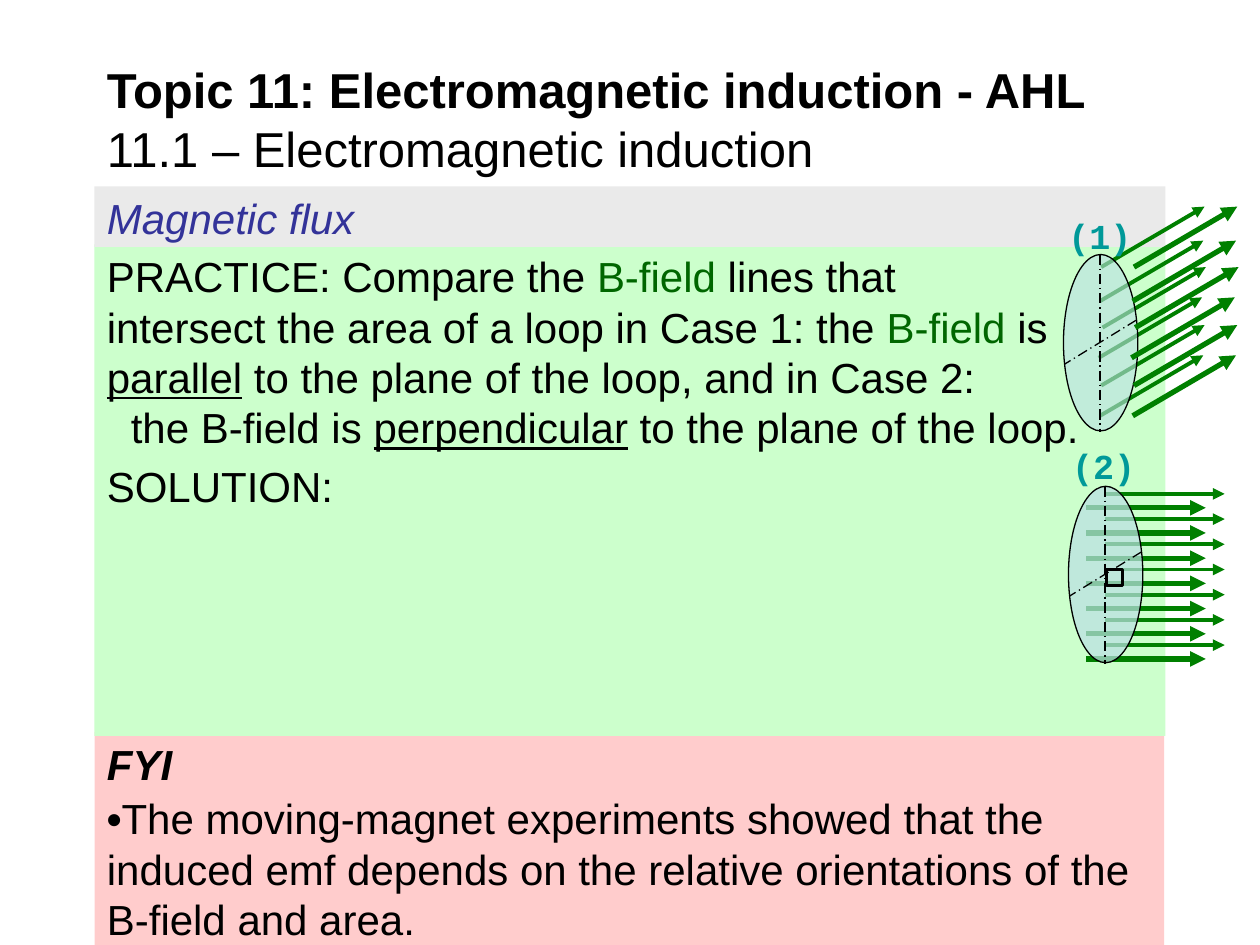
import dataclasses
from typing import Any

import pptx
import pptx.dml.color
import pptx.enum.dml
import pptx.enum.shapes
import pptx.enum.text
import pptx.oxml.ns
import pptx.util
from lxml import etree

Inches = pptx.util.Inches
Pt = pptx.util.Pt
RGBColor = pptx.dml.color.RGBColor
Kind = pptx.enum.shapes.MSO_SHAPE
qn = pptx.oxml.ns.qn

BLACK = RGBColor(0x00, 0x00, 0x00)
PINK = RGBColor(0xFF, 0xCC, 0xCC)
MINT = RGBColor(0xCC, 0xFF, 0xCC)
GRAY = RGBColor(0xEA, 0xEA, 0xEA)
NAVY = RGBColor(0x33, 0x33, 0x99)
GREEN = RGBColor(0x00, 0x80, 0x00)
DARK = RGBColor(0x00, 0x66, 0x00)
TEAL = RGBColor(0x00, 0x99, 0x99)
GLASS = RGBColor(0xBB, 0xE0, 0xE3)


@dataclasses.dataclass
class Loop:
    left: float
    top: float
    alpha: int
    square: bool = False


@dataclasses.dataclass
class Field:
    """Parallel arrows: their starts, common run and rise, and line width."""
    starts: list[tuple[float, float]]
    run: float
    rise: float
    width: float


def write(para: Any, text: str, *, size: float = 24, font: str = "Arial",
          color: RGBColor = BLACK, bold: bool = False, italic: bool = False,
          under: bool = False) -> None:
    run = para.add_run()
    run.text = text
    face = run.font
    face.size, face.name = Pt(size), font
    face.bold, face.italic, face.underline = bold, italic, under
    face.color.rgb = color


def fill_text(frame: Any, paras: list, gaps: list[float]) -> None:
    """Write paragraphs, each a list of (text, format) runs, below given gaps."""
    frame.word_wrap = True
    for i, (runs, gap) in enumerate(zip(paras, gaps)):
        para = frame.paragraphs[0] if i == 0 else frame.add_paragraph()
        para.alignment = pptx.enum.text.PP_ALIGN.LEFT
        para.space_before = Pt(gap)
        for text, form in runs:
            write(para, text, **form)


def add_shape(shapes: Any, kind: Any, box: tuple, *, fill: Any = None,
              line: float = 0, alpha: int = 100) -> Any:
    shape = shapes.add_shape(kind, *map(Inches, box))
    shape.shadow.inherit = False
    if fill is None:
        shape.fill.background()
    else:
        shape.fill.solid()
        shape.fill.fore_color.rgb = fill
    if alpha < 100:
        tone = shape.fill._xPr.find(".//" + qn("a:srgbClr"))
        etree.SubElement(tone, qn("a:alpha"), val=str(alpha * 1000))
    if line:
        shape.line.color.rgb = BLACK
        shape.line.width = Pt(line)
    else:
        shape.line.fill.background()
    return shape


def add_panel(shapes: Any, box: tuple, fill: RGBColor, paras: list,
              gaps: list[float]) -> Any:
    panel = add_shape(shapes, Kind.RECTANGLE, box, fill=fill)
    panel.text_frame.vertical_anchor = pptx.enum.text.MSO_ANCHOR.TOP
    fill_text(panel.text_frame, paras, gaps)
    return panel


def add_box(shapes: Any, box: tuple, paras: list) -> Any:
    area = shapes.add_textbox(*map(Inches, box))
    fill_text(area.text_frame, paras, [0] * len(paras))
    return area


def add_line(shapes: Any, start: tuple, end: tuple, color: RGBColor,
             width: float, arrow: bool = False) -> None:
    """Draw an arrow, or a dash-dot axis when arrow is False."""
    line = shapes.add_connector(pptx.enum.shapes.MSO_CONNECTOR.STRAIGHT,
                                *map(Inches, start + end))
    line.line.color.rgb = color
    line.line.width = Pt(width)
    if arrow:
        etree.SubElement(line.line._get_or_add_ln(), qn("a:tailEnd"),
                         type="triangle")
    else:
        line.line.dash_style = pptx.enum.dml.MSO_LINE.LONG_DASH_DOT
    etree.SubElement(line._element.spPr, qn("a:effectLst"))


def add_field(shapes: Any, field: Field) -> None:
    for x, y in field.starts:
        add_line(shapes, (x, y), (x + field.run, y - field.rise),
                 GREEN, field.width, arrow=True)


def add_loop(shapes: Any, loop: Loop) -> None:
    group = shapes.add_group_shape().shapes
    x, y = loop.left, loop.top
    add_shape(group, Kind.OVAL, (x, y, 0.59, 1.4), fill=GLASS, line=0.75,
              alpha=loop.alpha)
    add_line(group, (x + 0.29, y), (x + 0.29, y + 1.41), BLACK, 0.75)
    add_line(group, (x + 0.58, y + 0.52), (x + 0.01, y + 0.87), BLACK, 0.75)
    if loop.square:
        add_shape(group, Kind.RECTANGLE, (x + 0.3, y + 0.66, 0.13, 0.13),
                  line=1.5)


def add_label(shapes: Any, left: float, top: float, text: str) -> None:
    form = dict(size=20, font="Courier New", color=TEAL, bold=True)
    add_box(shapes, (left, top, 0.82, 0.43), [[(text, form)]])


def main() -> None:
    deck = pptx.Presentation()
    deck.slide_width, deck.slide_height = Inches(10), Inches(7.5)
    shapes = deck.slides.add_slide(deck.slide_layouts[6]).shapes

    add_panel(shapes, (0.75, 5.81, 8.49, 1.69), PINK, [
        [("FYI", dict(bold=True, italic=True))],
        [("•", dict(bold=True)),
         ("The moving-magnet experiments showed that the induced emf depends "
          "on the relative orientations of the B-field and area.", {})],
    ], [2.4, 2.4])

    field = ("B-field", dict(color=DARK))
    task = add_panel(shapes, (0.75, 1.94, 8.5, 3.9), MINT, [
        [("PRACTICE: Compare the ", {}), field, (" lines that", {})],
        [("intersect the area of a loop in Case 1: the ", {}), field,
         (" is ", {}), ("parallel", dict(under=True)),
         (" to the plane of the loop, and in Case 2:", {})],
        [("the B-field is ", {}), ("perpendicular", dict(under=True)),
         (" to the plane of the loop.", {})],
        [("SOLUTION:", {})],
    ], [4.8, 0, 0, 4.8])
    inset = task.text_frame.paragraphs[2]._p.get_or_add_pPr()
    inset.set("marL", str(Inches(0.19)))

    add_panel(shapes, (0.75, 1.48, 8.5, 0.48), GRAY,
              [[("Magnetic flux", dict(color=NAVY, italic=True))]], [4.8])

    tilts = list(zip([8.74, 8.73, 8.75, 8.72, 8.74, 8.73],
                     [2.12, 2.39, 2.6, 2.84, 3.06, 3.3]))
    rows = [0.2 * i for i in range(7)]
    add_field(shapes, Field(tilts, 0.82, 0.48, 2.25))
    add_loop(shapes, Loop(8.44, 2.02, 61))
    add_field(shapes, Field([(8.77, 3.92 + y) for y in rows], 0.95, 0, 2.25))
    add_label(shapes, 8.38, 1.65, "(1)")
    add_label(shapes, 8.41, 3.48, "(2)")
    add_field(shapes, Field([(x + 0.26, y) for x, y in tilts], 0.82, 0.48, 3))
    add_field(shapes, Field([(8.62, 4.03 + y) for y in rows], 0.95, 0, 3))
    add_loop(shapes, Loop(8.48, 3.86, 72, square=True))

    title = add_box(shapes, (0.75, 0.45, 8.5, 0.98), [
        [("Topic 11: Electromagnetic induction - AHL",
          dict(size=28, bold=True))],
        [("11.1 – Electromagnetic induction", dict(size=28))],
    ])
    title.text_frame.vertical_anchor = pptx.enum.text.MSO_ANCHOR.MIDDLE
    deck.save("out.pptx")


if __name__ == "__main__":
    main()
